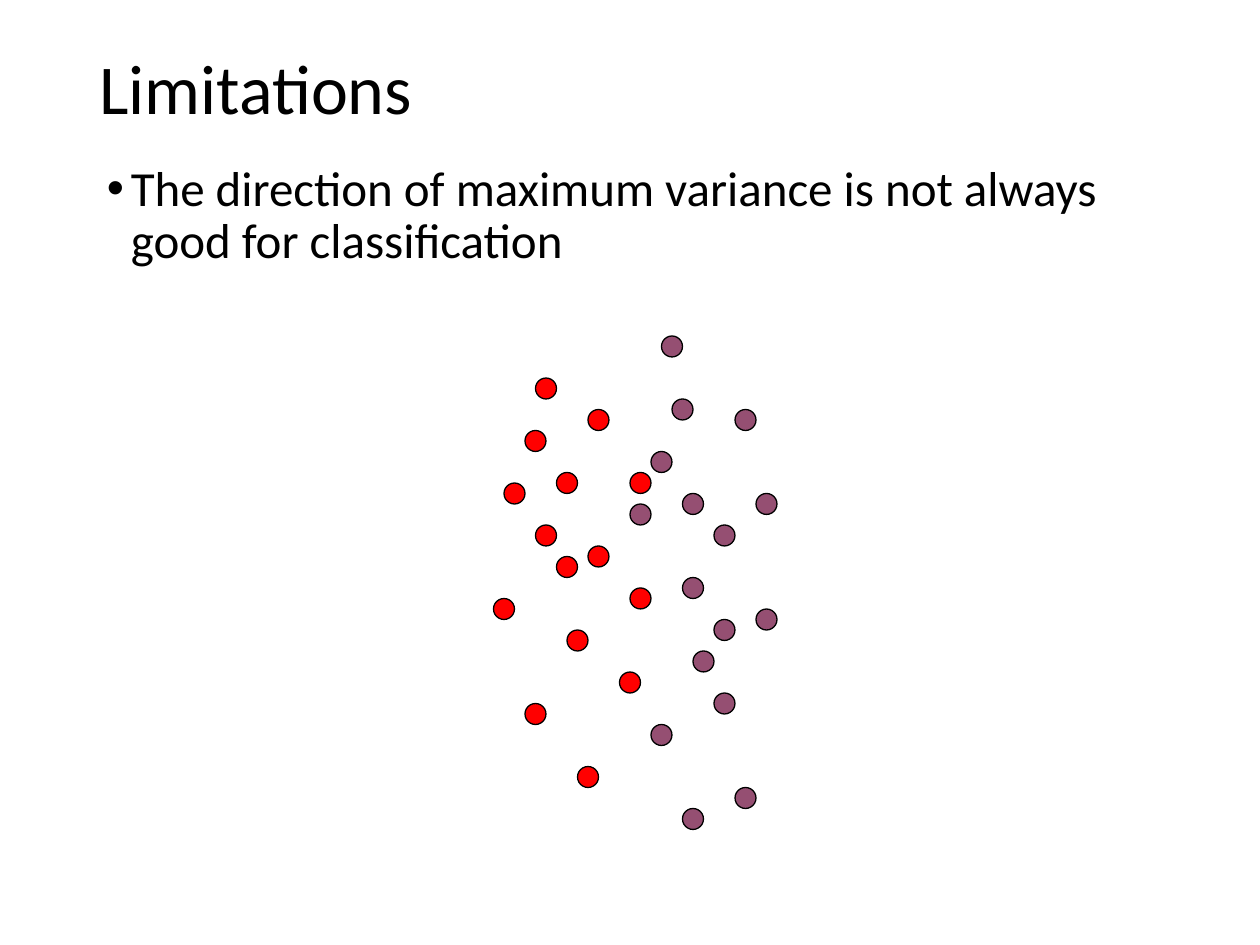
from pptx import Presentation
from pptx import util as u
from pptx.dml.color import RGBColor
from pptx.enum import shapes, text
from pptx.oxml.ns import qn
from lxml import etree

TITLE = "Limitations"
BULLET = "The direction of maximum variance is not always good for classification"

# Dot positions (column, row) on a grid of 12 cells to the inch
CLASSES = {
    "red": [(51, 36), (53, 45), (50, 41), (48, 46), (51, 50), (54, 60), (56, 52), (47, 57),
            (53, 53), (50, 67), (56, 39), (60, 45), (60, 56), (59, 64), (55, 73)],
    "purple": [(63, 32), (65, 47), (62, 43), (60, 48), (68, 50), (66, 62), (70, 39), (68, 59),
               (65, 55), (62, 69), (64, 38), (72, 47), (72, 58), (68, 66), (70, 75), (65, 77)],
}
THEME = {
    "font": "Calibri", "title": 40, "body": 28, "outline": 0.75,
    "black": RGBColor(0, 0, 0),
    "red": RGBColor(0xFF, 0, 0),
    "purple": RGBColor(0x95, 0x4F, 0x72),
}
CELL = u.Inches(1) // 12
DOT = 2 * CELL
INDENT = u.Inches(0.19)


def add_text(s, words, box, size, anchor, bullet=None):
    tf = s.shapes.add_textbox(*(u.Inches(v) for v in box)).text_frame
    tf.word_wrap, tf.vertical_anchor = True, anchor
    p = tf.paragraphs[0]
    p.line_spacing = 0.9
    if bullet:
        pPr = p._p.get_or_add_pPr()
        pPr.set("marL", str(INDENT))
        pPr.set("indent", str(-INDENT))
        etree.SubElement(pPr, qn("a:buFont")).set("typeface", "Arial")
        etree.SubElement(pPr, qn("a:buChar")).set("char", bullet)
    r = p.add_run()
    r.text = words
    for name, value in {"name": THEME["font"], "size": u.Pt(size)}.items():
        setattr(r.font, name, value)
    r.font.color.rgb = THEME["black"]


def add_dot(s, col, row, color):
    sp = s.shapes.add_shape(shapes.MSO_SHAPE.OVAL, col * CELL, row * CELL, DOT, DOT)
    sp.shadow.inherit = False
    sp.fill.solid()
    sp.fill.fore_color.rgb = color
    sp.line.color.rgb = THEME["black"]
    sp.line.width = u.Pt(THEME["outline"])


def main():
    prs = Presentation()
    prs.slide_width, prs.slide_height = u.Inches(10), u.Inches(7.5)
    s = prs.slides.add_slide(prs.slide_layouts[6])
    add_text(s, TITLE, (0.69, 0, 8.62, 1.45), THEME["title"], text.MSO_ANCHOR.MIDDLE)
    add_text(s, BULLET, (0.75, 1.25, 8.5, 1.25), THEME["body"], text.MSO_ANCHOR.TOP, "•")
    for name, dots in CLASSES.items():
        for col, row in dots:
            add_dot(s, col, row, THEME[name])
    prs.save("out.pptx")


if __name__ == "__main__":
    main()
